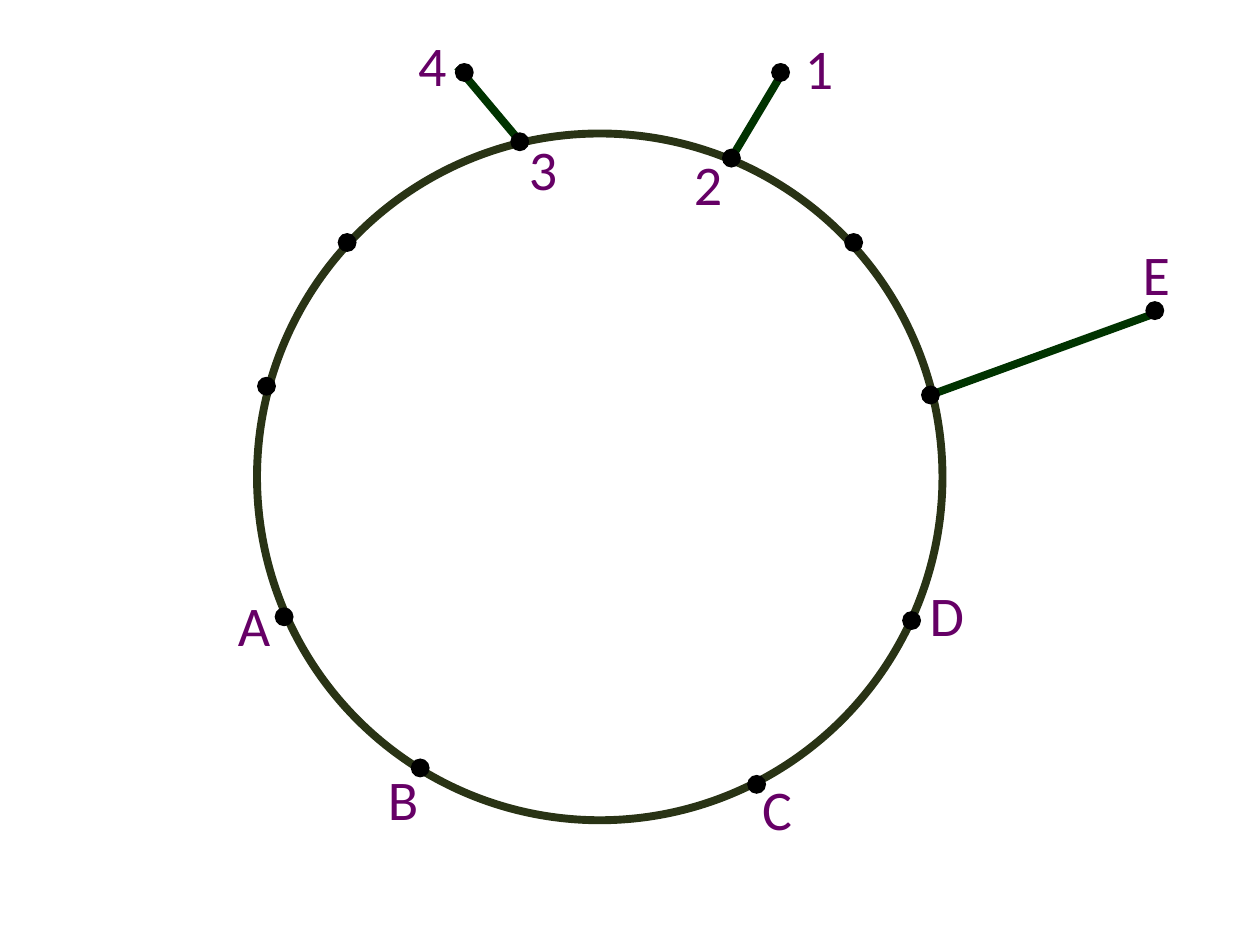
from pptx import Presentation
from pptx.util import Pt
from pptx.dml.color import RGBColor as Rgb
from pptx.enum.shapes import MSO_SHAPE as Shape, MSO_CONNECTOR as Conn
from pptx.enum.text import MSO_AUTO_SIZE as Fit
from pptx.oxml.ns import qn
from lxml.etree import SubElement as Sub

theme = {
    "ring": Rgb.from_string("293315"),
    "spoke": Rgb.from_string("003300"),
    "dot": Rgb.from_string("000000"),
    "label": Rgb.from_string("660066"),
    "font": "Calibri",
    "size": Pt(32),
    "line": Pt(4.5),
}

deck = Presentation()
deck.slide_width, deck.slide_height = Pt(720), Pt(540)
col, row = deck.slide_width / 100, deck.slide_height / 75
slide = deck.slides.add_slide(deck.slide_layouts[6])


def grid(x, y, *size):
    spans = (x * col, y * row) + tuple(n * u for n, u in zip(size, (col, row)))
    return [round(n) for n in spans]


def write(home, text, x, y, size=theme["size"], color=theme["label"], font=theme["font"]):
    box = home.shapes.add_textbox(*grid(x, y, 4.7, 6.4))
    frame = box.text_frame
    frame.word_wrap = True
    frame.auto_size = Fit.SHAPE_TO_FIT_TEXT
    run = frame.paragraphs[0].add_run()
    run.text = text
    run.font.size, run.font.name = size, font
    run.font.color.rgb = color


ring = slide.shapes.add_shape(Shape.OVAL, *grid(20.4, 10.6, 54.4, 54.5))
ring.shadow.inherit = False
ring.fill.background()
ring.line.color.rgb = theme["ring"]
ring.line.width = theme["line"]

spokes = [
    (36.3, 5.3, 41, 10.9),
    (58.2, 12.3, 62.2, 5.6),
    (73.7, 31.4, 91.6, 24.9),
]
for x, y, right, end in spokes:
    spoke = slide.shapes.add_connector(Conn.STRAIGHT, *grid(x, y, right, end))
    spoke.line.color.rgb = theme["spoke"]
    spoke.line.width = theme["line"]
    Sub(spoke._element.spPr, qn("a:effectLst"))

points = [
    (21.8, 48.2, "A", 17.9, 46.4),
    (36.1, 5, "4", 32.2, 1.9),
    (20.4, 29.9, None, 0, 0),
    (26.8, 18.5, None, 0, 0),
    (67, 18.5, None, 0, 0),
    (73.1, 30.6, None, 0, 0),
    (61.2, 5, "1", 62.9, 2.2),
    (90.9, 23.9, "E", 89.7, 18.5),
    (32.6, 60.2, "B", 29.8, 60.2),
    (59.3, 61.5, "C", 59.5, 61),
    (71.6, 48.5, "D", 72.8, 45.6),
    (57.3, 11.8, "2", 54.1, 11.4),
    (40.5, 10.5, "3", 41, 10.2),
]
for x, y, name, left, top in points:
    home = slide.shapes.add_group_shape() if name in ("2", "3") else slide
    dot = home.shapes.add_shape(Shape.OVAL, *grid(x, y, 1.5, 1.5))
    dot.shadow.inherit = False
    dot.fill.solid()
    dot.fill.fore_color.rgb = theme["dot"]
    dot.line.fill.background()
    if name:
        write(home, name, left, top)

deck.save("out.pptx")
